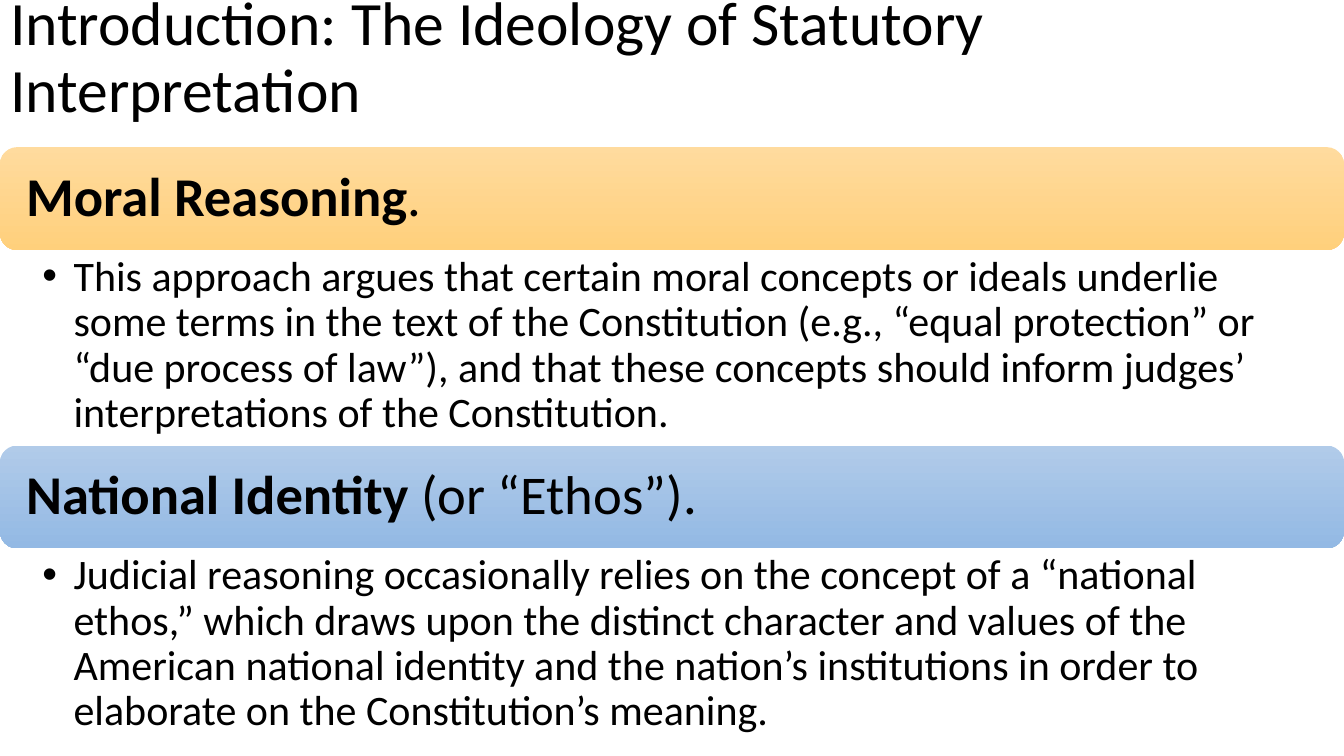
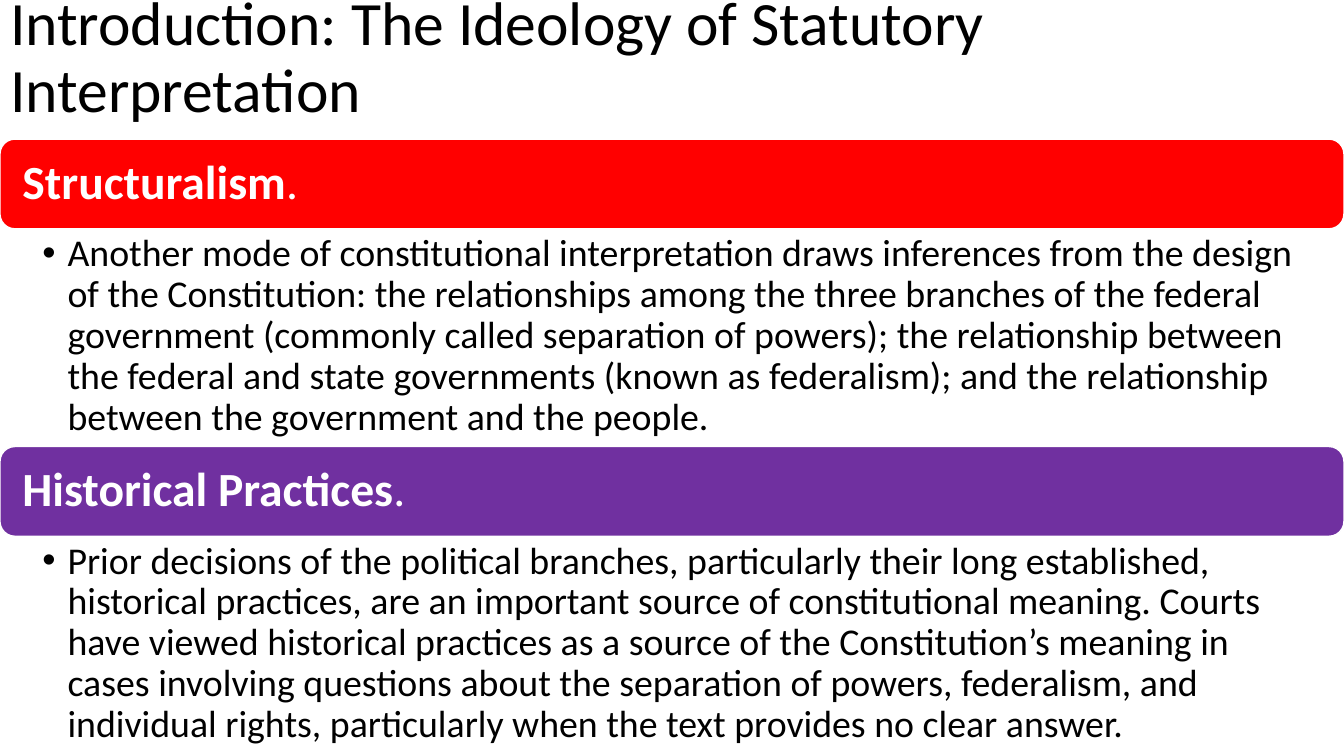
from lxml.etree import SubElement
from pptx import Presentation
from pptx.dml.color import RGBColor
from pptx.enum.shapes import MSO_SHAPE
from pptx.enum.text import MSO_ANCHOR, MSO_AUTO_SIZE, PP_ALIGN
from pptx.oxml.ns import qn
from pptx.util import Inches, Pt

WIDE, HIGH = 13.33, 7.5
FONT = "Calibri"
TITLE = "Introduction: The Ideology of Statutory Interpretation"
HUES = {
    "ink": "000000", "white": "FFFFFF",
    "sand": "FFDB9E", "amber": "FFD07C",
    "mist": "B1CBE9", "sky": "93B9E4",
    "red": "FF0000", "plum": "7030A0",
}

# Sizes of each stack: top, band and list heights, text sizes, insets
SOFT = dict(top=1.46, band=1.02, body=1.94, head=39, size=30,
            pad=0.21, right=0.3, hang=0.31, ink="ink")
BOLD = dict(top=1.38, band=0.89, body=2.16, head=34, size=27,
            pad=0.18, right=0.26, hang=0.25, ink="white", edge="white")

SLIDES = [
    (SOFT, [
        (("sand", "amber"), "Moral Reasoning", ".",
         "This approach argues that certain moral concepts or ideals underlie "
         "some terms in the text of the Constitution (e.g., “equal protection” "
         "or “due process of law”), and that these concepts should inform "
         "judges’ interpretations of the Constitution."),
        (("mist", "sky"), "National Identity ", "(or “Ethos”).",
         "Judicial reasoning occasionally relies on the concept of a “national "
         "ethos,” which draws upon the distinct character and values of the "
         "American national identity and the nation’s institutions in order to "
         "elaborate on the Constitution’s meaning."),
    ]),
    (BOLD, [
        (("red",), "Structuralism", ".",
         "Another mode of constitutional interpretation draws inferences from "
         "the design of the Constitution: the relationships among the three "
         "branches of the federal government (commonly called separation of "
         "powers); the relationship between the federal and state governments "
         "(known as federalism); and the relationship between the government "
         "and the people."),
        (("plum",), "Historical Practices", ".",
         "Prior decisions of the political branches, particularly their long "
         "established, historical practices, are an important source of "
         "constitutional meaning. Courts have viewed historical practices as a "
         "source of the Constitution’s meaning in cases involving questions "
         "about the separation of powers, federalism, and individual rights, "
         "particularly when the text provides no clear answer."),
    ]),
]


def tint(name):
    return RGBColor.from_string(HUES[name])


def write(shape, *runs, size, ink="ink", bold=False, hang=0,
          anchor=MSO_ANCHOR.MIDDLE, pads=(0.1, 0.05, 0.1, 0.05)):
    """Fill a shape with one paragraph; only its first run may be bold."""
    frame = shape.text_frame
    frame.word_wrap = True
    frame.auto_size = MSO_AUTO_SIZE.NONE
    frame.vertical_anchor = anchor
    (frame.margin_left, frame.margin_top,
     frame.margin_right, frame.margin_bottom) = map(Inches, pads)
    para = frame.paragraphs[0]
    if hang:
        props = para._p.get_or_add_pPr()
        props.set("marL", str(Inches(hang)))
        props.set("indent", str(-Inches(hang)))
        SubElement(props, qn("a:buFont")).set("typeface", "Arial")
        SubElement(props, qn("a:buChar")).set("char", "•")
    para.alignment = PP_ALIGN.LEFT
    para.line_spacing = 0.9
    para.space_before = Pt(0)
    for i, text in enumerate(runs):
        run = para.add_run()
        run.text = text
        font = run.font
        font.name, font.size = FONT, Pt(size)
        font.bold = bold and i == 0
        font.color.rgb = tint(ink)


def place(shape, x, y, w, h):
    shape.left, shape.top, shape.width, shape.height = map(
        Inches, (x, y, w, h))


def add_band(slide, box, fills, runs, look):
    """Rounded heading band, plain or shaded from top to bottom."""
    band = slide.shapes.add_shape(
        MSO_SHAPE.ROUNDED_RECTANGLE, *map(Inches, box))
    band.shadow.inherit = False
    if len(fills) > 1:
        band.fill.gradient()
        band.fill.gradient_angle = 270
        for stop, name in zip(band.fill.gradient_stops, fills):
            stop.color.rgb = tint(name)
    else:
        band.fill.solid()
        band.fill.fore_color.rgb = tint(fills[0])
    if "edge" in look:
        band.line.color.rgb = tint(look["edge"])
        band.line.width = Pt(1)
    else:
        band.line.fill.background()
    write(band, *runs, size=look["head"], ink=look["ink"], bold=True,
          pads=(look["pad"], 0.05, look["pad"], 0.05))


def add_part(slide, holder, box, part, look):
    """A heading band with its bulleted text below."""
    x, y, w, h = box
    fills, lead, rest, text = part
    add_band(slide, (x, y, w, look["band"]), fills, (lead, rest), look)
    place(holder, x, y + look["band"], w, h - look["band"])
    write(holder, text, size=look["size"], hang=look["hang"],
          anchor=MSO_ANCHOR.TOP, pads=(0.42, 0.05, look["right"], 0.05))


def add_page(deck, look, parts):
    slide = deck.slides.add_slide(deck.slide_layouts[3])
    title, *lists = slide.placeholders
    # Title
    place(title, 0, 0, WIDE, 1.17)
    write(title, TITLE, size=44)
    # Stacked parts
    step = look["band"] + look["body"]
    for i, (holder, part) in enumerate(zip(lists, parts)):
        box = (0, look["top"] + i * step, WIDE, step)
        add_part(slide, holder, box, part, look)


def main():
    deck = Presentation()
    deck.slide_width, deck.slide_height = Inches(WIDE), Inches(HIGH)
    for look, parts in SLIDES:
        add_page(deck, look, parts)
    deck.save("out.pptx")


if __name__ == "__main__":
    main()
